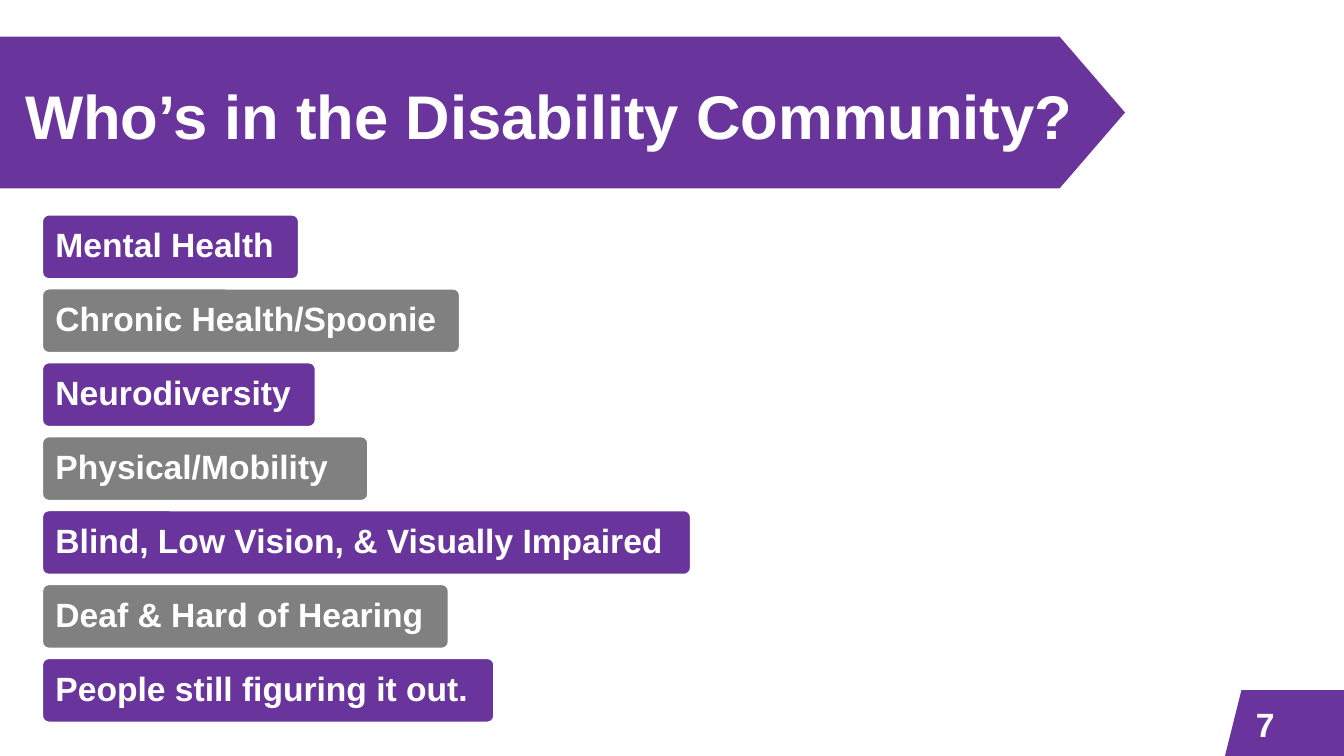
import pptx
import pptx.util
import pptx.dml.color
import pptx.enum.shapes
import pptx.enum.text

Pt = pptx.util.Pt
SHAPE = pptx.enum.shapes.MSO_SHAPE
ANCHOR = pptx.enum.text.MSO_ANCHOR
LEFT = pptx.enum.text.PP_ALIGN.LEFT

TITLE = "Who’s in the Disability Community?"
PAGE_NUMBER = "7"
COMMUNITIES = [
    ("Mental Health", 183),
    ("Chronic Health/Spoonie", 298),
    ("Neurodiversity", 195),
    ("Physical/Mobility", 232.5),
    ("Blind, Low Vision,\u00a0& Visually Impaired", 463),
    ("Deaf & Hard of Hearing", 290),
    ("People still figuring it out.", 322.5),
]
COLORS = {"purple": "69359C", "gray": "808080", "white": "FFFFFF"}
LABEL_LEFT, LABEL_TOP, LABEL_HEIGHT, LABEL_PITCH = 30.3, 153.5, 45.6, 52.8


def color(name):
    return pptx.dml.color.RGBColor.from_string(COLORS[name])


def add_block(page, kind, box, fill, adjustment):
    block = page.shapes.add_shape(kind, *map(Pt, box))
    block.shadow.inherit = False
    block.adjustments[0] = adjustment
    block.fill.solid()
    block.fill.fore_color.rgb = color(fill)
    block.line.fill.background()
    return block


def write(shape, text, size, anchor=ANCHOR.MIDDLE, spacing=0.9):
    frame = shape.text_frame
    frame.word_wrap = True
    frame.auto_size = pptx.enum.text.MSO_AUTO_SIZE.NONE
    frame.vertical_anchor = anchor
    frame.text = text
    para = frame.paragraphs[0]
    para.alignment = LEFT
    para.line_spacing = spacing
    para.font.name = "Arial"
    para.font.size = Pt(size)
    para.font.bold = True
    para.font.color.rgb = color("white")


def main():
    deck = pptx.Presentation()
    deck.slide_width, deck.slide_height = Pt(960), Pt(540)
    page = deck.slides.add_slide(deck.slide_layouts[5])

    add_block(page, SHAPE.PARALLELOGRAM, (872.7, 493, 113.8, 56.2), "purple", 0.25)
    add_block(page, SHAPE.PENTAGON, (-18.7, 26.2, 822.3, 108.4), "purple", 0.431)
    number = page.shapes.add_textbox(*map(Pt, (890, 499, 54, 29)))
    write(number, PAGE_NUMBER, 24, ANCHOR.TOP, 1)

    title = page.shapes.title
    title.left, title.top, title.width, title.height = map(Pt, (10.8, 33.1, 828, 104.4))
    write(title, TITLE, 44)
    title.element.getparent().append(title.element)

    for index, (name, width) in enumerate(COMMUNITIES):
        top = LABEL_TOP + index * LABEL_PITCH
        fill = "gray" if index % 2 else "purple"
        label = add_block(page, SHAPE.ROUNDED_RECTANGLE,
                          (LABEL_LEFT, top, width, LABEL_HEIGHT), fill, 0.1)
        label.line.color.rgb = color("white")
        label.line.width = Pt(1)
        write(label, name, 24)
        label.text_frame.margin_left = label.text_frame.margin_right = Pt(8)

    deck.save("out.pptx")


if __name__ == "__main__":
    main()
